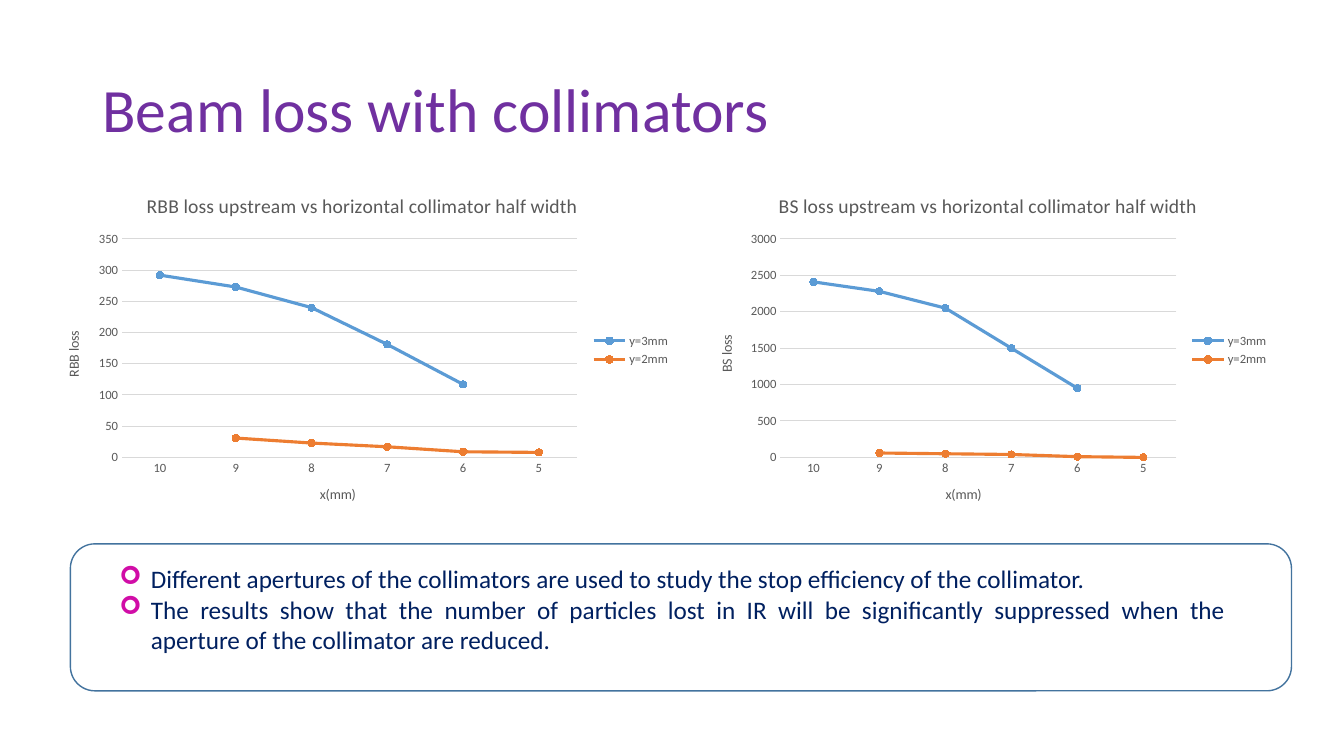
import pptx
import pptx.chart.data
import pptx.dml.color
import pptx.enum.chart
import pptx.enum.shapes
import pptx.enum.text
import pptx.oxml
import pptx.oxml.ns
import pptx.util

PX = 9525
HALF_WIDTHS = ["10", "9", "8", "7", "6", "5"]
GREY, GRID = "595959", "D9D9D9"
SERIES_COLOURS = ["5B9BD5", "ED7D31"]


def colour(value):
    return pptx.dml.color.RGBColor.from_string(value)


class SlideBuilder:
    """Hold the font and current slide, and add each kind of element."""

    def __init__(self, deck, font):
        self.slide = deck.slides.add_slide(deck.slide_layouts[1])
        self.font = font

    def style(self, font, size, value):
        font.name = self.font
        font.size = pptx.util.Pt(size)
        font.bold = False
        font.color.rgb = colour(value)

    def place(self, box, bounds):
        box.left, box.top, box.width, box.height = [n * PX for n in bounds]

    def title(self, text, bounds):
        box = self.slide.shapes.title
        self.place(box, bounds)
        frame = box.text_frame
        frame.text = text
        frame.auto_size = pptx.enum.text.MSO_AUTO_SIZE.NONE
        frame.vertical_anchor = pptx.enum.text.MSO_ANCHOR.MIDDLE
        para = frame.paragraphs[0]
        para.alignment = pptx.enum.text.PP_ALIGN.LEFT
        para.line_spacing = 0.9
        self.style(para.runs[0].font, 44, "7030A0")

    def bullets(self, lines, bounds):
        box = self.slide.placeholders[1]
        self.place(box, bounds)
        frame = box.text_frame
        frame.text = "\n".join(lines)
        frame.auto_size = pptx.enum.text.MSO_AUTO_SIZE.NONE
        frame.vertical_anchor = pptx.enum.text.MSO_ANCHOR.TOP
        namespace = pptx.oxml.ns.nsdecls("a")
        for para in frame.paragraphs:
            para.alignment = pptx.enum.text.PP_ALIGN.JUSTIFY
            para.space_before = pptx.util.Pt(0)
            properties = para._p.get_or_add_pPr()
            properties.set("marL", str(30 * PX))
            properties.set("indent", str(-30 * PX))
            for markup in (
                f'<a:buClr {namespace}><a:srgbClr val="D10DA7"/></a:buClr>',
                f'<a:buFont {namespace} typeface="Wingdings"/>',
                f'<a:buChar {namespace} char="➢"/>',
            ):
                properties.append(pptx.oxml.parse_xml(markup))
            self.style(para.runs[0].font, 18, "002060")

    def outline(self, bounds):
        kind = pptx.enum.shapes.MSO_SHAPE.ROUNDED_RECTANGLE
        box = self.slide.shapes.add_shape(kind, *[n * PX for n in bounds])
        box.shadow.inherit = False
        box.fill.background()
        box.line.color.rgb = colour("43739E")
        box.line.width = pptx.util.Pt(1)

    def heading(self, owner, text, size):
        frame = owner.text_frame
        frame.text = text
        self.style(frame.paragraphs[0].runs[0].font, size, GREY)

    def axis(self, axis, text, line):
        axis.major_tick_mark = pptx.enum.chart.XL_TICK_MARK.NONE
        axis.minor_tick_mark = pptx.enum.chart.XL_TICK_MARK.NONE
        self.style(axis.tick_labels.font, 9, GREY)
        self.heading(axis.axis_title, text, 10)
        line.color.rgb = colour(GRID)
        line.width = pptx.util.Pt(0.75)

    def line_chart(self, quantity, series_values, bounds):
        data = pptx.chart.data.CategoryChartData()
        data.categories = HALF_WIDTHS
        for name, values in series_values.items():
            data.add_series(name, values)
        kind = pptx.enum.chart.XL_CHART_TYPE.LINE_MARKERS
        chart = self.slide.shapes.add_chart(kind, *[n * PX for n in bounds], data).chart
        self.style(chart.font, 10, "000000")
        chart.has_title = True
        self.heading(chart.chart_title, f"{quantity} upstream vs horizontal collimator half width", 14)
        chart.chart_title.include_in_layout = False
        chart.has_legend = True
        chart.legend.position = pptx.enum.chart.XL_LEGEND_POSITION.RIGHT
        chart.legend.include_in_layout = False
        self.style(chart.legend.font, 9, GREY)
        self.axis(chart.category_axis, "x(mm)", chart.category_axis.format.line)
        self.axis(chart.value_axis, quantity, chart.value_axis.major_gridlines.format.line)
        chart.value_axis.format.line.fill.background()
        chart.plots[0].vary_by_categories = False
        for series, value in zip(chart.plots[0].series, SERIES_COLOURS):
            series.smooth = False
            series.format.line.color.rgb = colour(value)
            series.format.line.width = pptx.util.Pt(2.25)
            series.marker.style = pptx.enum.chart.XL_MARKER_STYLE.CIRCLE
            series.marker.size = 5
            series.marker.format.fill.solid()
            series.marker.format.fill.fore_color.rgb = colour(value)
            series.marker.format.line.color.rgb = colour(value)


def main():
    deck = pptx.Presentation()
    deck.slide_width, deck.slide_height = 1280 * PX, 720 * PX
    page = SlideBuilder(deck, "Calibri")
    page.title("Beam loss with collimators", (88, 38, 1104, 139))
    page.line_chart(
        "BS loss",
        {"y=3mm": [2410, 2280, 2050, 1500, 950, None], "y=2mm": [None, 60, 50, 40, 10, 0]},
        (664, 168, 554, 331),
    )
    page.line_chart(
        "RBB loss",
        {"y=3mm": [292, 273, 240, 181, 117, None], "y=2mm": [None, 31, 23, 17, 9, 8]},
        (42, 168, 606, 331),
    )
    page.bullets(
        [
            "Different apertures of the collimators are used to study the stop efficiency of the collimator.",
            "The results show that the number of particles lost in IR will be significantly suppressed "
            "when the aperture of the collimator are reduced.",
        ],
        (104, 532, 1073, 97),
    )
    page.outline((67, 518, 1163, 140))
    deck.save("out.pptx")


if __name__ == "__main__":
    main()
